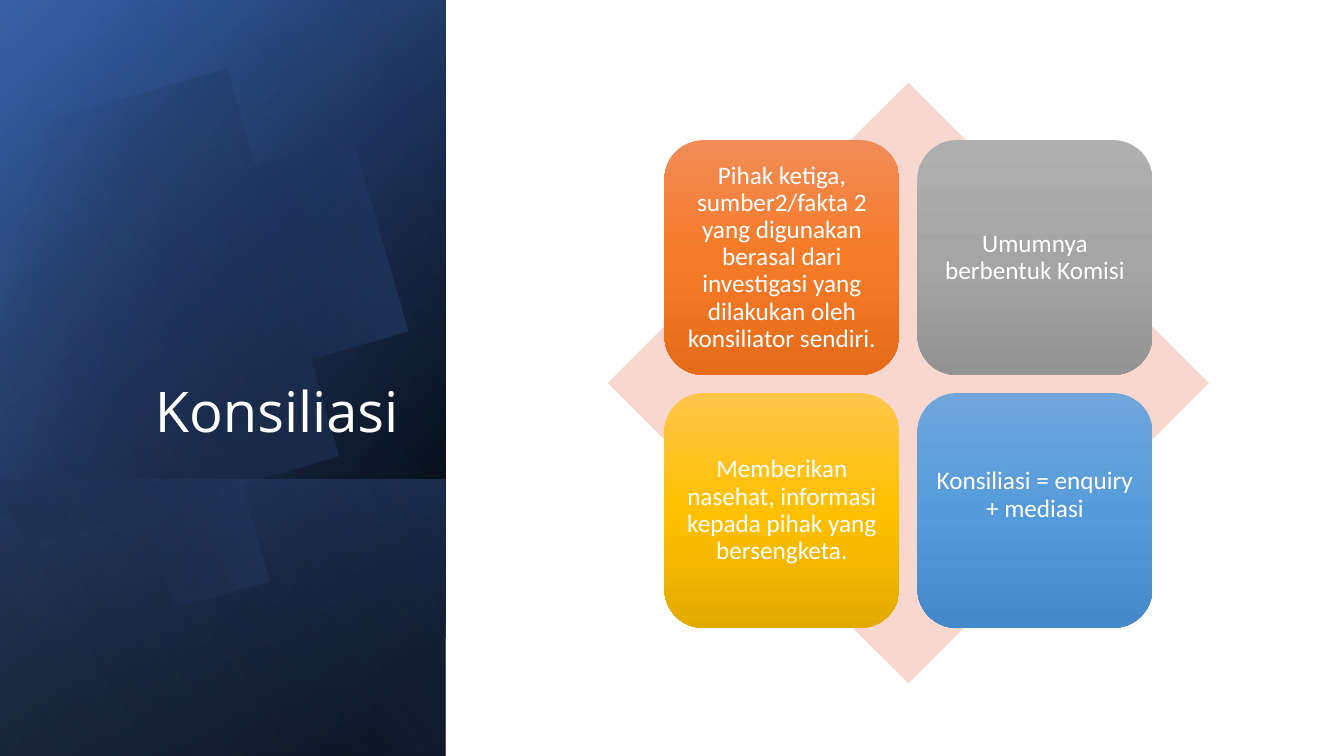
import math
from dataclasses import dataclass

import pptx
import pptx.dml.color
import pptx.enum.shapes
import pptx.enum.text
import pptx.oxml
import pptx.oxml.ns
import pptx.util

Inches = pptx.util.Inches
SHAPE = pptx.enum.shapes.MSO_SHAPE
ALIGN = pptx.enum.text.PP_ALIGN
ANCHOR = pptx.enum.text.MSO_ANCHOR


@dataclass(frozen=True)
class Theme:
    white: str = "FFFFFF"
    black: str = "000000"
    blue: str = "4472C4"
    dark_blue: str = "2F5597"
    light_blue: str = "8FAADC"
    diamond: str = "F8D7CE"
    orange: tuple = ("F18C57", "F67B28", "E56C19")
    gray: tuple = ("AFAFAF", "A5A5A5", "939393")
    gold: tuple = ("FFC64B", "FFC000", "E3AB00")
    sky: tuple = ("71A6DB", "559BDB", "448ACA")
    title_font: str = "Open Sans"
    body_font: str = "Calibri"
    title_size: int = 40
    body_size: int = 18


class Builder:
    def __init__(self, slide, theme):
        self.slide, self.theme = slide, theme
        self.shapes = slide.shapes

    def plain(self, sp):
        sp.shadow.inherit = False
        sp.line.fill.background()

    def gradient(self, sp, stops, angle):
        """Stops are (position %, colour, opacity %)."""
        sp.fill.gradient()
        grad = sp._element.spPr.find(pptx.oxml.ns.qn("a:gradFill"))
        stop_list = grad.find(pptx.oxml.ns.qn("a:gsLst"))
        for old in list(stop_list):
            stop_list.remove(old)
        for pos, color, opacity in stops:
            stop_list.append(pptx.oxml.parse_xml(
                f'<a:gs {pptx.oxml.ns.nsdecls("a")} pos="{pos * 1000}">'
                f'<a:srgbClr val="{color}"><a:alpha val="{opacity * 1000}"/>'
                '</a:srgbClr></a:gs>'))
        grad.find(pptx.oxml.ns.qn("a:lin")).set("ang", str(angle * 60000))

    def shape(self, kind, x, y, w, h):
        sp = self.shapes.add_shape(kind, Inches(x), Inches(y), Inches(w), Inches(h))
        self.plain(sp)
        return sp

    def panel(self, x, y, w, h, stops, angle):
        """Gradient rectangle, mirrored and turned a quarter."""
        sp = self.shape(SHAPE.RECTANGLE, x, y, w, h)
        sp.rotation = 90
        sp._element.spPr.xfrm.set("flipH", "1")
        self.gradient(sp, stops, angle)

    def outline(self, points, rotation, stops, angle):
        fb = self.shapes.build_freeform(*points[0], scale=Inches(1))
        fb.add_line_segments(points[1:], close=True)
        sp = fb.convert_to_shape()
        self.plain(sp)
        sp.rotation = rotation
        self.gradient(sp, stops, angle)

    def set_text(self, tf, text, font, size, align, anchor):
        tf.word_wrap = True
        tf.vertical_anchor = anchor
        p = tf.paragraphs[0]
        p.text = text
        p.alignment = align
        p.line_spacing = 0.9
        p.font.name, p.font.size = font, pptx.util.Pt(size)
        p.font.color.rgb = pptx.dml.color.RGBColor.from_string(self.theme.white)

    def title(self, x, y, w, h, text):
        tb = self.shapes.add_textbox(Inches(x), Inches(y), Inches(w), Inches(h))
        self.set_text(tb.text_frame, text, self.theme.title_font,
                      self.theme.title_size, ALIGN.RIGHT, ANCHOR.BOTTOM)

    def diamond(self, x, y, size):
        sp = self.shape(SHAPE.DIAMOND, x, y, size, size)
        sp.fill.solid()
        sp.fill.fore_color.rgb = pptx.dml.color.RGBColor.from_string(self.theme.diamond)

    def card(self, x, y, size, text, colors, lift):
        sp = self.shape(SHAPE.ROUNDED_RECTANGLE, x, y, size, size)
        self.gradient(sp, [(pos, c, 100) for pos, c in zip((0, 50, 100), colors)], 90)
        tf = sp.text_frame
        tf.margin_left = tf.margin_right = tf.margin_top = Inches(0.07)
        tf.margin_bottom = Inches(0.07 + lift)
        self.set_text(tf, text, self.theme.body_font,
                      self.theme.body_size, ALIGN.CENTER, ANCHOR.MIDDLE)


def bezier(start, c1, c2, end, steps=16):
    """Points along a cubic curve, without its start."""
    result = []
    for i in range(1, steps + 1):
        t = i / steps
        u = 1 - t
        weights = (u ** 3, 3 * u * u * t, 3 * u * t * t, t ** 3)
        result.append(tuple(sum(k * pt[axis] for k, pt in zip(weights, (start, c1, c2, end)))
                            for axis in (0, 1)))
    return result


def turn(points, degrees, center):
    cos, sin = math.cos(math.radians(degrees)), math.sin(math.radians(degrees))
    cx, cy = center
    return [(cx + (x - cx) * cos - (y - cy) * sin,
             cy + (x - cx) * sin + (y - cy) * cos) for x, y in points]


def disc_points():
    """Disc cut straight along its left side."""
    points = [(1.49, 1.1)]
    for curve in (((2.46, 1.12), (3.35, 1.77), (3.63, 2.75)),
                  ((3.98, 3.97), (3.28, 5.23), (2.07, 5.58)),
                  ((1.31, 5.8), (0.53, 5.61), (-0.03, 5.14))):
        points += bezier(points[-1], *curve)
    points += [(-0.15, 5.03), (-0.15, 1.75), (0, 1.61)]
    for curve in (((0.23, 1.42), (0.5, 1.28), (0.8, 1.19)),
                  ((1.03, 1.13), (1.26, 1.1), (1.49, 1.1))):
        points += bezier(points[-1], *curve)
    return points


def main():
    prs = pptx.Presentation()
    prs.slide_width, prs.slide_height = Inches(13.33), Inches(7.5)
    theme = Theme()
    b = Builder(prs.slides.add_slide(prs.slide_layouts[6]), theme)

    # Layered dark panel on the left
    full = (-1.54, 1.54, 7.5, 4.42)
    b.panel(*full, [(8, theme.black, 100), (100, theme.dark_blue, 100)], 50)
    b.panel(*full, [(0, theme.black, 0), (99, theme.blue, 46)], 30)
    b.panel(0.84, 3.92, 2.74, 4.42, [(2, theme.blue, 29), (100, theme.black, 30)], 130)
    tilt = 16.1
    b.outline(turn(disc_points(), tilt, (1.58, 3.34)), 360 - tilt,
              [(29, theme.black, 0), (100, theme.blue, 43)], 30)
    b.panel(*full, [(0, theme.black, 0), (99, theme.light_blue, 11)], 120)

    # Title
    b.title(0.64, 1.84, 3.41, 2.62, "Konsiliasi")

    # Four cards over a diamond, in one group
    b.shapes = b.slide.shapes.add_group_shape().shapes
    b.diamond(6.03, 0.82, 5.96)
    cards = [
        ("Pihak ketiga, sumber2/fakta 2 yang digunakan berasal dari investigasi "
         "yang dilakukan oleh konsiliator sendiri.", theme.orange, 0),
        ("Umumnya berbentuk Komisi", theme.gray, 0),
        ("Memberikan nasehat, informasi kepada pihak yang bersengketa.", theme.gold, 0),
        ("Konsiliasi = enquiry + mediasi", theme.sky, 0.3),
    ]
    pitch = 2.51
    for i, (text, colors, lift) in enumerate(cards):
        row, col = divmod(i, 2)
        b.card(6.59 + col * pitch, 1.39 + row * pitch, 2.33, text, colors, lift)

    prs.save("out.pptx")


if __name__ == "__main__":
    main()
